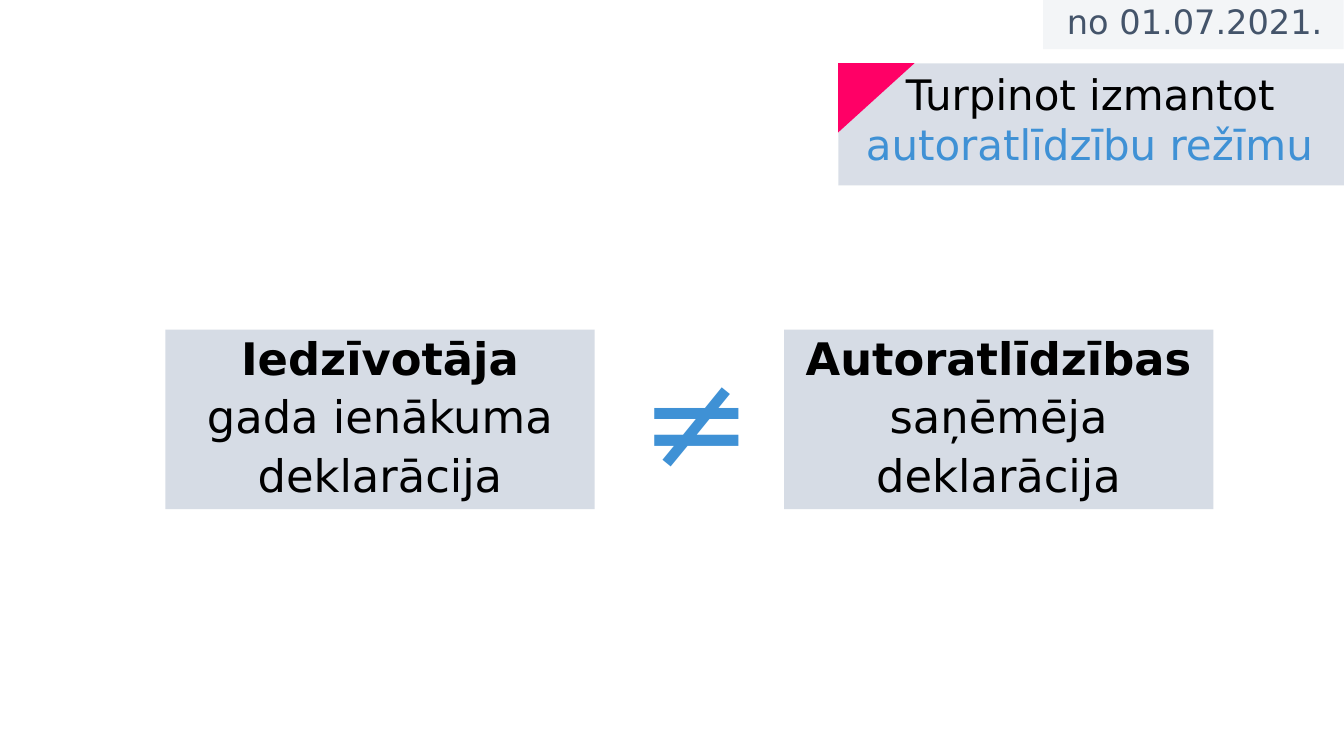
import pptx
import pptx.dml.color
import pptx.enum.shapes
import pptx.enum.text
import pptx.oxml
import pptx.oxml.ns
import pptx.util
from pptx.enum.shapes import MSO_SHAPE
from pptx.enum.text import MSO_ANCHOR, PP_ALIGN
from pptx.util import Cm

FONT = "DejaVu Sans"
PALE = pptx.dml.color.RGBColor(0xD6, 0xDC, 0xE5)
SLATE = pptx.dml.color.RGBColor(0x44, 0x54, 0x6A)
BLUE = pptx.dml.color.RGBColor(0x3F, 0x91, 0xD5)
PINK = pptx.dml.color.RGBColor(0xFF, 0x00, 0x66)
BLACK = pptx.dml.color.RGBColor(0, 0, 0)


def fill_shape(shape, color, opacity=100):
    shape.fill.solid()
    shape.fill.fore_color.rgb = color
    if opacity < 100:
        color_element = shape.fill._xPr.find(".//" + pptx.oxml.ns.qn("a:srgbClr"))
        alpha = pptx.oxml.parse_xml(
            f'<a:alpha {pptx.oxml.ns.nsdecls("a")} val="{opacity * 1000}"/>')
        color_element.append(alpha)


def add_block(slide, kind, left, top, width, height, color, opacity=100):
    shape = slide.shapes.add_shape(kind, Cm(left), Cm(top), Cm(width), Cm(height))
    shape.shadow.inherit = False
    shape.line.fill.background()
    fill_shape(shape, color, opacity)
    return shape


def write_lines(shape, lines, size, alignment, anchor, line_spacing=1.0, gap=0):
    """Write one paragraph for each (text, color, bold) line."""
    frame = shape.text_frame
    frame.word_wrap = True
    frame.auto_size = pptx.enum.text.MSO_AUTO_SIZE.NONE
    frame.vertical_anchor = anchor
    for index, (text, color, bold) in enumerate(lines):
        paragraph = frame.add_paragraph() if index else frame.paragraphs[0]
        paragraph.alignment = alignment
        paragraph.line_spacing = line_spacing
        paragraph.space_before = pptx.util.Pt(gap if index else 0)
        run = paragraph.add_run()
        run.text = text
        run.font.name = FONT
        run.font.size = pptx.util.Pt(size)
        run.font.bold = bold
        run.font.color.rgb = color


def add_title(slide):
    title = slide.shapes.title
    title.left, title.top = Cm(21.13), Cm(1.6)
    title.width, title.height = Cm(12.74), Cm(3.07)
    fill_shape(title, PALE, 92)
    lines = [("Turpinot izmantot", BLACK, False),
             ("autoratlīdzību režīmu", BLUE, False)]
    write_lines(title, lines, 30, PP_ALIGN.LEFT, MSO_ANCHOR.TOP)
    title.text_frame.margin_left = Cm(0.69)
    title.text_frame.margin_right = Cm(0)
    # The first line starts clear of the pink corner
    properties = title.text_frame.paragraphs[0]._p.get_or_add_pPr()
    properties.set("indent", str(Cm(1.01)))


def add_date(slide):
    date = add_block(slide, MSO_SHAPE.RECTANGLE, 26.29, -0.03, 7.57, 1.27, PALE, 28)
    write_lines(date, [("no 01.07.2021.", SLATE, False)], 24,
                PP_ALIGN.RIGHT, MSO_ANCHOR.MIDDLE, 0.9)
    date.text_frame.margin_right = Cm(0.53)


def add_declaration(slide, left, heading, *details):
    box = add_block(slide, MSO_SHAPE.RECTANGLE, left, 8.31, 10.82, 4.52, PALE)
    lines = [(heading, BLACK, True)] + [(text, BLACK, False) for text in details]
    write_lines(box, lines, 32, PP_ALIGN.CENTER, MSO_ANCHOR.MIDDLE, 0.9, 7.5)


def add_unequal_sign(slide):
    sign = slide.shapes.add_textbox(Cm(15.9), Cm(8.31), Cm(2.92), Cm(4.37))
    write_lines(sign, [("≠", BLUE, False)], 96, PP_ALIGN.LEFT, MSO_ANCHOR.TOP)


def main():
    presentation = pptx.Presentation()
    presentation.slide_width = Cm(33.87)
    presentation.slide_height = Cm(19.05)
    slide = presentation.slides.add_slide(presentation.slide_layouts[5])

    # Header with date and pink corner
    add_title(slide)
    add_date(slide)
    corner = add_block(slide, MSO_SHAPE.RIGHT_TRIANGLE, 21.21, 1.5, 1.75, 1.93, PINK)
    corner.rotation = 90

    # The two declarations that differ
    add_declaration(slide, 4.17, "Iedzīvotāja", "gada ienākuma", "deklarācija")
    add_unequal_sign(slide)
    add_declaration(slide, 19.76, "Autoratlīdzības", "saņēmēja", "deklarācija")

    presentation.save("out.pptx")


if __name__ == "__main__":
    main()
